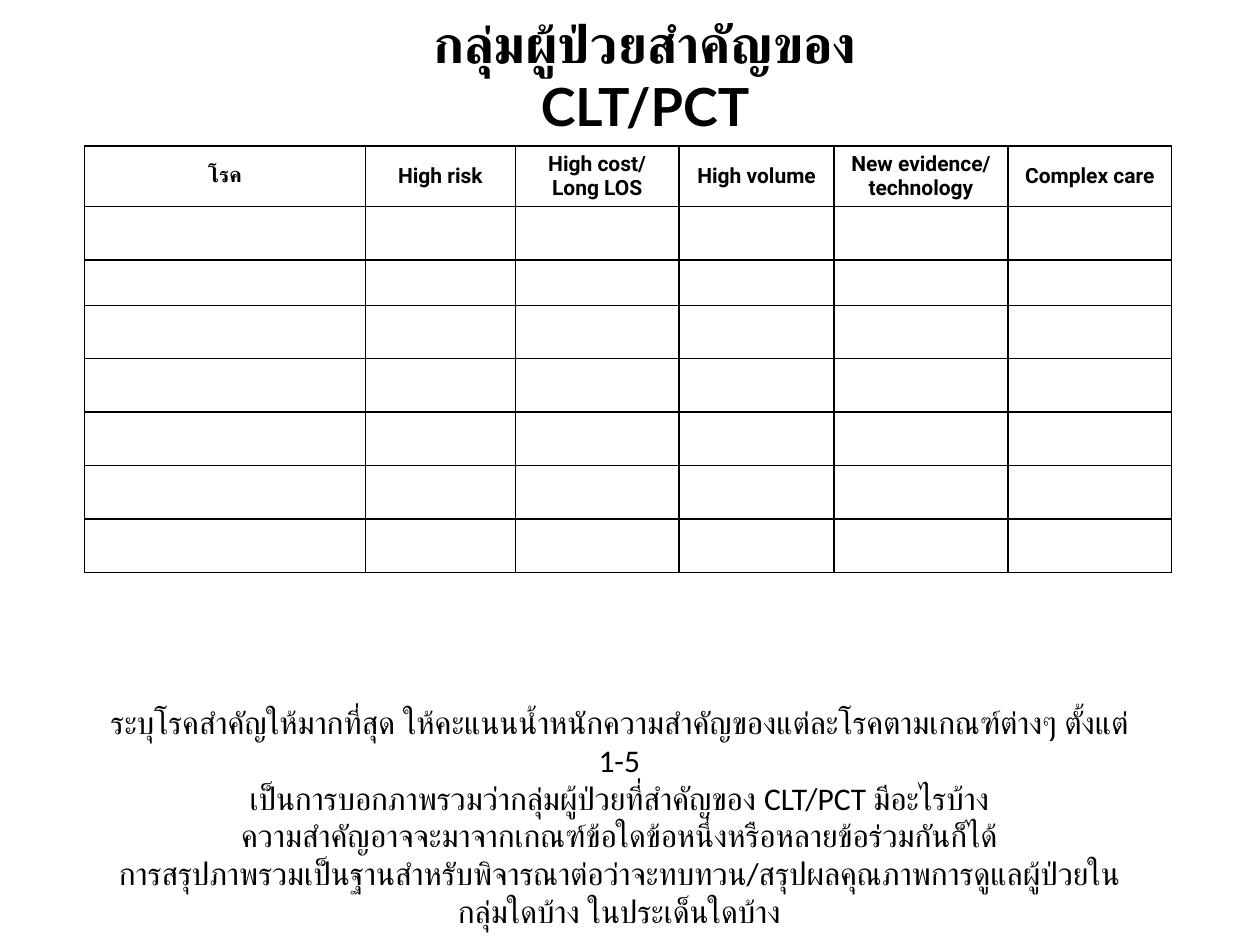
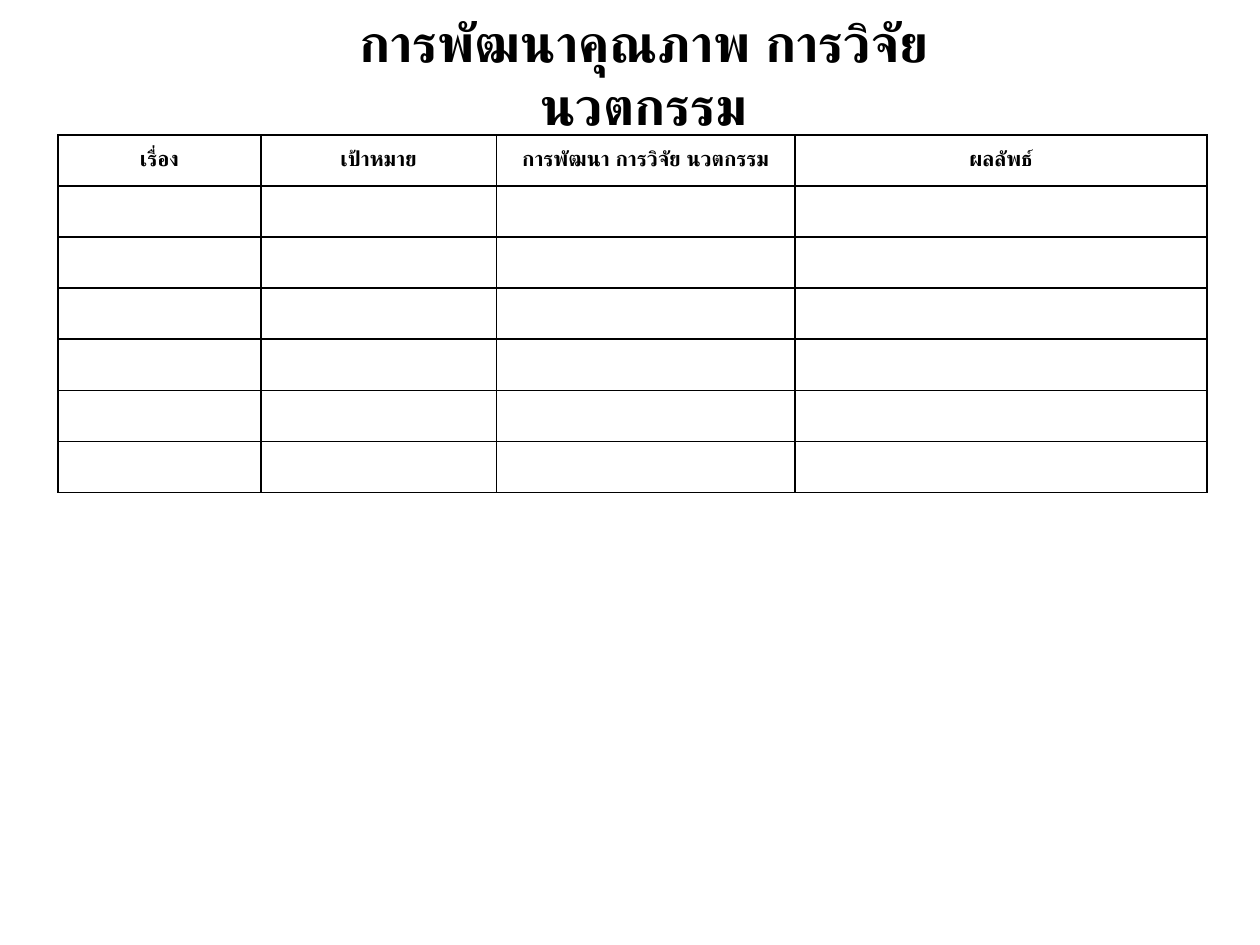
"""Builds two worksheet slides: a title over an empty ruled table, with an optional note."""
from dataclasses import dataclass

from lxml.etree import SubElement as Sub
from pptx import Presentation as Deck
from pptx.dml.color import RGBColor as Rgb
from pptx.enum.text import MSO_ANCHOR as Anchor, MSO_AUTO_SIZE as Fit, PP_ALIGN as Align
from pptx.oxml.ns import qn
from pptx.util import Emu, Inches, Pt

WIDE, HIGH = Inches(10), Inches(7.5)
HUES = {"ink": "000000", "paper": "FFFFFF"}
SIDES = ("a:lnL", "a:lnR", "a:lnT", "a:lnB")


@dataclass(frozen=True)
class Box:
    """Left, top, width and height in percent of the slide."""

    left: float
    top: float
    width: float
    height: float

    def frame(self) -> tuple[Emu, Emu, Emu, Emu]:
        return across(self.left), down(self.top), across(self.width), down(self.height)


@dataclass(frozen=True)
class Grid:
    """Corner, column widths and row heights in percent, with the header texts."""

    left: float
    top: float
    cols: tuple[float, ...]
    rows: tuple[float, ...]
    heads: tuple[str, ...]


@dataclass(frozen=True)
class Page:
    title: str
    place: Box
    grid: Grid
    note: str = ""


def across(share: float) -> Emu:
    return Emu(round(WIDE * share / 100))


def down(share: float) -> Emu:
    return Emu(round(HIGH * share / 100))


def write(frame, text: str, *, font: str, size: float, bold: bool = False) -> None:
    """Fills a text frame with centred paragraphs, one per line of text."""
    for spot, line in enumerate(text.split("\n")):
        para = frame.add_paragraph() if spot else frame.paragraphs[0]
        para.alignment = Align.CENTER
        run = para.add_run()
        run.text = line
        run.font.name, run.font.size, run.font.bold = font, Pt(size), bold
        run.font.color.rgb = Rgb.from_string(HUES["ink"])


def add_text(slide, box: Box, text: str, *, anchor=Anchor.TOP,
             pad: tuple[float, float] = (0.1, 0.05), **style) -> None:
    frame = slide.shapes.add_textbox(*box.frame()).text_frame
    frame.word_wrap, frame.auto_size = True, Fit.SHAPE_TO_FIT_TEXT
    frame.vertical_anchor = anchor
    frame.margin_left = frame.margin_right = Inches(pad[0])
    frame.margin_top = frame.margin_bottom = Inches(pad[1])
    write(frame, text, **style)


def rule(cell) -> None:
    """Gives a cell a plain fill and a thin line on every side."""
    props = cell._tc.get_or_add_tcPr()
    for side in SIDES:
        line = Sub(props, qn(side), w=str(Pt(1)))
        fill = Sub(line, qn("a:solidFill"))
        Sub(fill, qn("a:srgbClr"), val=HUES["ink"])
    cell.fill.solid()
    cell.fill.fore_color.rgb = Rgb.from_string(HUES["paper"])


def add_grid(slide, grid: Grid) -> None:
    box = Box(grid.left, grid.top, sum(grid.cols), sum(grid.rows))
    table = slide.shapes.add_table(len(grid.rows), len(grid.cols), *box.frame()).table
    table.first_row = table.horz_banding = False
    for col, share in zip(table.columns, grid.cols):
        col.width = across(share)
    for row, share in zip(table.rows, grid.rows):
        row.height = down(share)
    for cell in table.iter_cells():
        cell.margin_left = cell.margin_right = Inches(0.06)
        cell.margin_top = cell.margin_bottom = 0
        cell.vertical_anchor = Anchor.MIDDLE
        rule(cell)
    for spot, head in enumerate(grid.heads):
        write(table.cell(0, spot).text_frame, head, font="Roboto", size=12, bold=True)


PAGES = (
    Page(
        "กลุ่มผู้ป่วยสำคัญของ CLT/PCT",
        Box(31.1, 4, 40.2, 7.73),
        Grid(6.7, 15.47, (22.3, 11.9, 13, 12.3, 13.8, 13),
             (6.4, 5.65, 4.8) + (5.65,) * 5,
             ("โรค", "High risk", "High cost/\nLong LOS", "High volume",
              "New evidence/\ntechnology", "Complex care")),
        "ระบุโรคสำคัญให้มากที่สุด ให้คะแนนน้ำหนักความสำคัญของแต่ละโรคตามเกณฑ์ต่างๆ ตั้งแต่ 1-5\n"
        "เป็นการบอกภาพรวมว่ากลุ่มผู้ป่วยที่สำคัญของ CLT/PCT มีอะไรบ้าง\n"
        "ความสำคัญอาจจะมาจากเกณฑ์ข้อใดข้อหนึ่งหรือหลายข้อร่วมกันก็ได้\n"
        "การสรุปภาพรวมเป็นฐานสำหรับพิจารณาต่อว่าจะทบทวน/สรุปผลคุณภาพการดูแลผู้ป่วยใน"
        "กลุ่มใดบ้าง ในประเด็นใดบ้าง",
    ),
    Page(
        "การพัฒนาคุณภาพ การวิจัย นวตกรรม",
        Box(26.2, 3.87, 49.8, 7.73),
        Grid(4.6, 14.27, (16.1, 18.7, 23.7, 32.7), (5.41,) * 7,
             ("เรื่อง", "เป้าหมาย", "การพัฒนา การวิจัย นวตกรรม", "ผลลัพธ์")),
    ),
)
NOTE = Box(6.7, 73.73, 84.9, 17.47)


def main() -> None:
    deck = Deck()
    deck.slide_width, deck.slide_height = WIDE, HIGH
    for page in PAGES:
        slide = deck.slides.add_slide(deck.slide_layouts[6])
        add_grid(slide, page.grid)
        add_text(slide, page.place, page.title, anchor=Anchor.MIDDLE, pad=(0.07, 0.04),
                 font="Lato", size=30, bold=True)
        if page.note:
            add_text(slide, NOTE, page.note, font="Calibri", size=18)
    deck.save("out.pptx")


if __name__ == "__main__":
    main()
